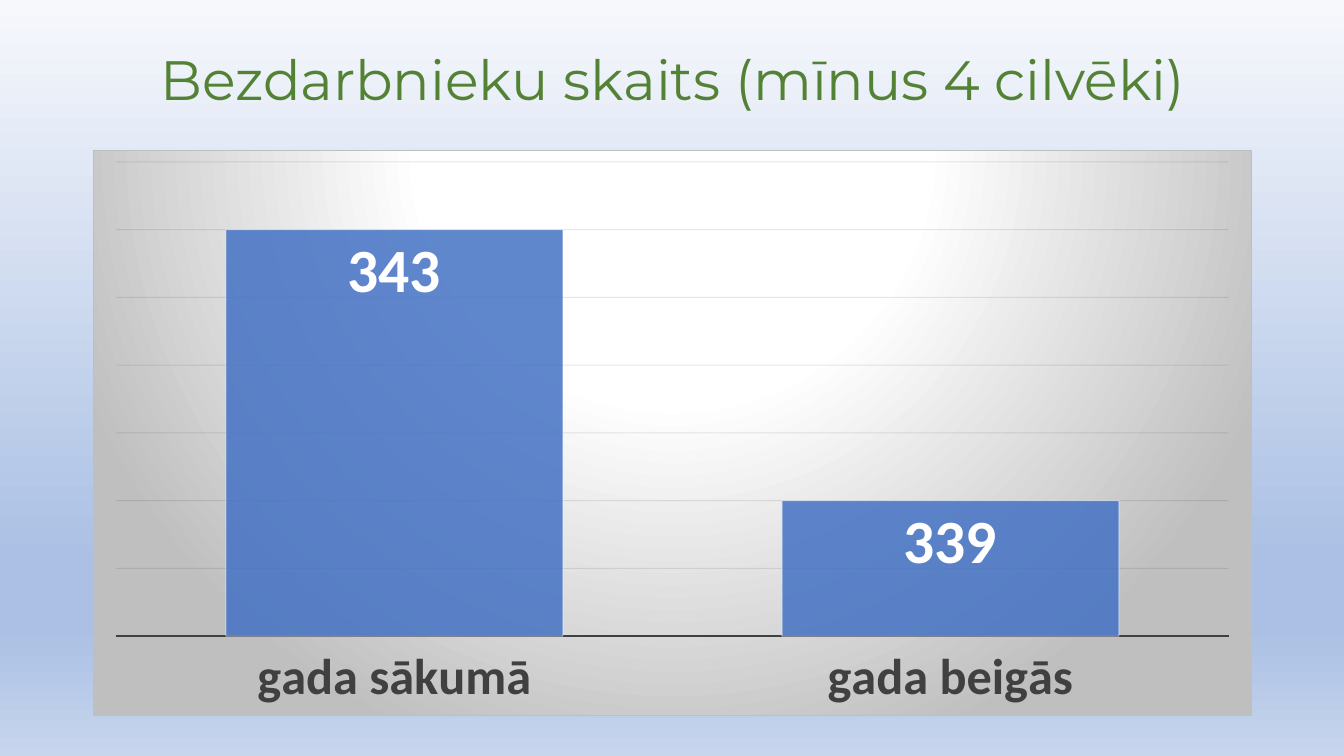
from dataclasses import dataclass

from lxml import etree
from pptx import Presentation
from pptx.chart.data import CategoryChartData
from pptx.dml.color import RGBColor
from pptx.enum.chart import XL_CHART_TYPE, XL_LABEL_POSITION, XL_TICK_LABEL_POSITION, XL_TICK_MARK
from pptx.enum.text import MSO_ANCHOR, PP_ALIGN
from pptx.oxml import parse_xml
from pptx.oxml.ns import nsdecls, qn
from pptx.util import Inches, Pt

COLUMN_CLUSTERED = XL_CHART_TYPE.COLUMN_CLUSTERED
INSIDE_END = XL_LABEL_POSITION.INSIDE_END
LABELS_LOW = XL_TICK_LABEL_POSITION.LOW
NO_TICKS = XL_TICK_MARK.NONE
TOP = MSO_ANCHOR.TOP
CENTER = PP_ALIGN.CENTER

SLIDE_WIDTH, SLIDE_HEIGHT = Inches(13.33), Inches(7.5)
LINEAR_DOWN = '<a:lin ang="5400000" scaled="1"/>'
CIRCLE_FROM_ABOVE = ('<a:path path="circle">'
                     '<a:fillToRect l="50000" t="-80000" r="50000" b="180000"/></a:path>')


@dataclass(frozen=True)
class Stop:
    percent: int
    color: str


@dataclass(frozen=True)
class TextStyle:
    font: str
    size: float
    color: str
    bold: bool = False


@dataclass(frozen=True)
class Area:
    """A rectangle in inches."""
    left: float
    top: float
    width: float
    height: float

    def lengths(self) -> list:
        return [Inches(value) for value in (self.left, self.top, self.width, self.height)]


TITLE_AREA = Area(0.92, 0.4, 11.5, 1.45)
CHART_AREA = Area(0.92, 1.49, 11.5, 5.61)
PLOT_SHARES = {"x": 0.02, "y": 0.02, "w": 0.96, "h": 0.84}

TITLE_STYLE = TextStyle("Montserrat", 39.6, "548235")
CHART_STYLE = TextStyle("Calibri", 10, "000000")
CATEGORY_STYLE = TextStyle("Calibri", 36, "404040", True)
VALUE_STYLE = TextStyle("Calibri", 44, "FFFFFF", True)

SKY = [Stop(0, "F6F8FC"), Stop(74, "ABC0E4"), Stop(83, "ABC0E4"), Stop(100, "C7D5ED")]
SPOTLIGHT = [Stop(0, "FFFFFF"), Stop(39, "FFFFFF"), Stop(100, "BFBFBF")]
UNEMPLOYED = {"gada sākumā": 343, "gada beigās": 339}


def rgb(color: str) -> RGBColor:
    return RGBColor.from_string(color)


def style_font(font, style: TextStyle) -> None:
    font.name = style.font
    font.size = Pt(style.size)
    font.bold = style.bold
    font.color.rgb = rgb(style.color)


def style_line(line, color: str, width: float) -> None:
    line.color.rgb = rgb(color)
    line.width = Pt(width)


def set_opacity(element, color_path: str, percent: int) -> None:
    for color in element.xpath(color_path):
        etree.SubElement(color, qn("a:alpha")).set("val", str(percent * 1000))


def gradient_xml(stops: list[Stop], direction: str) -> str:
    stop_list = "".join(f'<a:gs pos="{stop.percent * 1000}"><a:srgbClr val="{stop.color}"/></a:gs>'
                        for stop in stops)
    return (f'<a:gradFill {nsdecls("a")} rotWithShape="1">'
            f'<a:gsLst>{stop_list}</a:gsLst>{direction}</a:gradFill>')


def paint_background(slide) -> None:
    slide.background.fill.solid()
    solid = slide.element.xpath(".//p:bgPr/a:solidFill")[0]
    solid.getparent().replace(solid, parse_xml(gradient_xml(SKY, LINEAR_DOWN)))


def add_title(slide, text: str) -> None:
    frame = slide.shapes.add_textbox(*TITLE_AREA.lengths()).text_frame
    frame.word_wrap = True
    frame.vertical_anchor = TOP
    frame.margin_top = Inches(0.12)
    paragraph = frame.paragraphs[0]
    paragraph.text = text
    paragraph.alignment = CENTER
    paragraph.line_spacing = 0.9
    style_font(paragraph.font, TITLE_STYLE)


def paint_chart_area(chart) -> None:
    # The chart area's properties stand just before its text properties
    properties = parse_xml(
        f'<c:spPr {nsdecls("c", "a")}>{gradient_xml(SPOTLIGHT, CIRCLE_FROM_ABOVE)}'
        '<a:ln w="9525"><a:solidFill><a:srgbClr val="BFBFBF"/></a:solidFill></a:ln></c:spPr>')
    chart.element.find(qn("c:txPr")).addprevious(properties)


def place_plot(chart) -> None:
    shares = "".join(f'<c:{key} val="{share}"/>' for key, share in PLOT_SHARES.items())
    layout = parse_xml(
        f'<c:layout {nsdecls("c")}><c:manualLayout><c:layoutTarget val="inner"/>'
        f'<c:xMode val="edge"/><c:yMode val="edge"/>{shares}</c:manualLayout></c:layout>')
    plot_area = chart.element.xpath("c:chart/c:plotArea")[0]
    for automatic in plot_area.findall(qn("c:layout")):
        plot_area.remove(automatic)
    plot_area.insert(0, layout)


def style_axes(chart) -> None:
    categories = chart.category_axis
    categories.major_tick_mark = NO_TICKS
    categories.tick_label_position = LABELS_LOW
    style_font(categories.tick_labels.font, CATEGORY_STYLE)
    style_line(categories.format.line, "404040", 1.5)

    values = chart.value_axis
    values.minimum_scale, values.maximum_scale, values.major_unit = 337, 344, 1
    values.has_major_gridlines = True
    style_line(values.major_gridlines.format.line, "0D0D0D", 0.75)
    set_opacity(chart.element, ".//c:majorGridlines//a:srgbClr", 10)
    values.visible = False


def style_columns(plot) -> None:
    plot.gap_width = 65
    plot.vary_by_categories = False
    series = plot.series[0]
    series.format.fill.solid()
    series.format.fill.fore_color.rgb = rgb("4472C4")
    style_line(series.format.line, "FFFFFF", 0.75)
    set_opacity(plot.series[0].format.fill and series._element,
                "c:spPr/a:solidFill/a:srgbClr", 85)
    set_opacity(series._element, "c:spPr/a:ln/a:solidFill/a:srgbClr", 50)
    labels = series.data_labels
    labels.show_value = True
    labels.position = INSIDE_END
    style_font(labels.font, VALUE_STYLE)


def add_unemployment_chart(slide) -> None:
    data = CategoryChartData()
    data.categories = list(UNEMPLOYED)
    data.add_series("Series 1", list(UNEMPLOYED.values()))
    chart = slide.shapes.add_chart(COLUMN_CLUSTERED, *CHART_AREA.lengths(), data).chart
    chart.has_title = False
    chart.has_legend = False
    style_font(chart.font, CHART_STYLE)
    paint_chart_area(chart)
    place_plot(chart)
    style_axes(chart)
    style_columns(chart.plots[0])


def main() -> None:
    presentation = Presentation()
    presentation.slide_width, presentation.slide_height = SLIDE_WIDTH, SLIDE_HEIGHT
    slide = presentation.slides.add_slide(presentation.slide_layouts[6])
    paint_background(slide)
    add_title(slide, "Bezdarbnieku skaits (mīnus 4 cilvēki)")
    add_unemployment_chart(slide)
    presentation.save("out.pptx")


if __name__ == "__main__":
    main()
